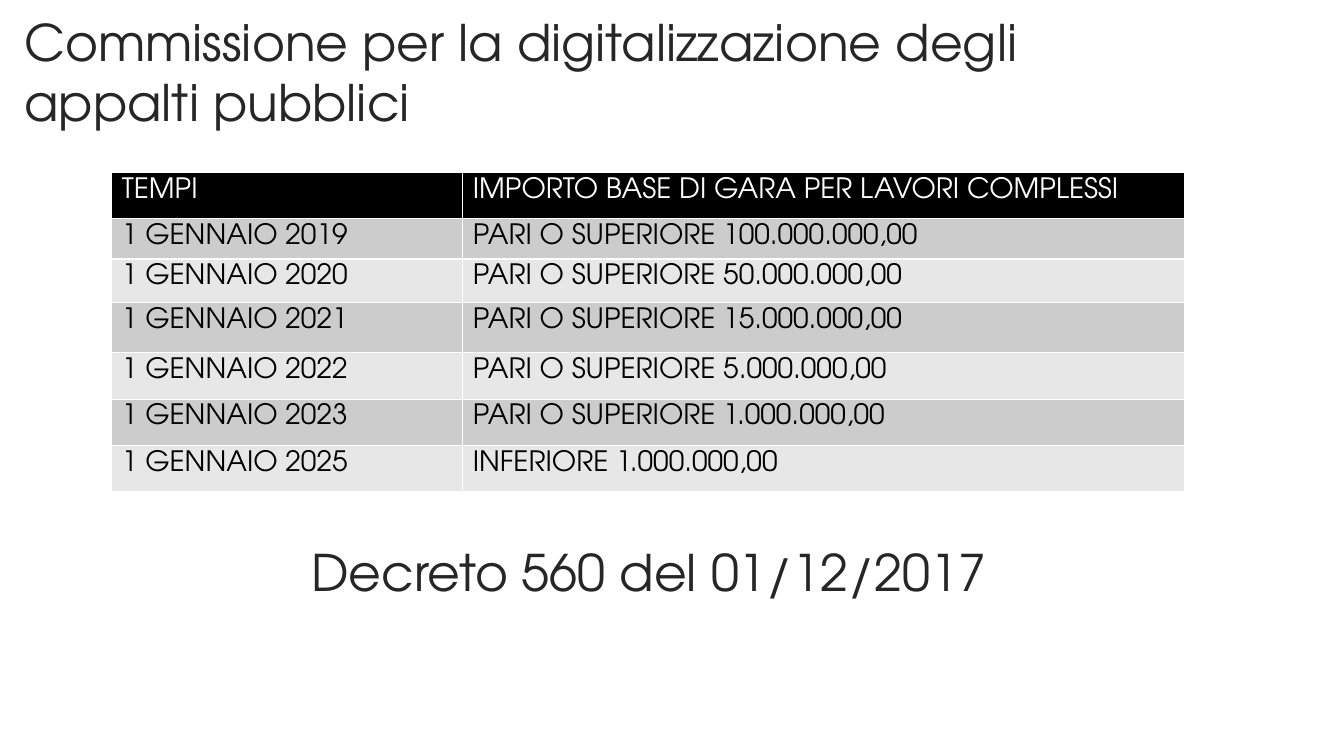
from lxml.etree import SubElement
from pptx import Presentation
from pptx.dml.color import RGBColor
from pptx.enum.text import MSO_ANCHOR, MSO_AUTO_SIZE, PP_ALIGN
from pptx.oxml.ns import qn
from pptx.util import Inches, Pt

FONT = "TeX Gyre Adventor"
COLORS = {
    "white": "FFFFFF",
    "black": "000000",
    "heading": "262626",
    "odd_row": "CCCCCC",
    "even_row": "E7E7E7",
}
COLUMN_WIDTHS = [3.48, 7.16]
ROW_HEIGHTS = [0.46, 0.4, 0.43, 0.5, 0.46, 0.46, 0.46]
ROWS = [
    ("TEMPI", "IMPORTO BASE DI GARA PER LAVORI COMPLESSI"),
    ("1 GENNAIO 2019", "PARI O SUPERIORE 100.000.000,00"),
    ("1 GENNAIO 2020", "PARI O SUPERIORE 50.000.000,00"),
    ("1 GENNAIO 2021", "PARI O SUPERIORE 15.000.000,00"),
    ("1 GENNAIO 2022", "PARI O SUPERIORE 5.000.000,00"),
    ("1 GENNAIO 2023", "PARI O SUPERIORE 1.000.000,00"),
    ("1 GENNAIO 2025", "INFERIORE 1.000.000,00"),
]


def color(name):
    return RGBColor.from_string(COLORS[name])


def add_span(para, text, size, color_name):
    span = para.add_run()
    span.text = text
    span.font.name = FONT
    span.font.size = Pt(size)
    span.font.color.rgb = color(color_name)


def fill_heading(shape, box, text, align):
    """Place a text shape in its box and write one large heading in it."""
    shape.left, shape.top, shape.width, shape.height = map(Inches, box)
    frame = shape.text_frame
    frame.word_wrap = True
    frame.auto_size = MSO_AUTO_SIZE.NONE
    frame.vertical_anchor = MSO_ANCHOR.TOP
    para = frame.paragraphs[0]
    para.alignment = align
    para.line_spacing = 1.0
    add_span(para, text, 36, "heading")


def set_borders(cell):
    """Draw white cell borders, which must come before the fill in the XML."""
    properties = cell._tc.get_or_add_tcPr()
    for side in ("lnL", "lnR", "lnT", "lnB"):
        line = SubElement(properties, qn(f"a:{side}"), w=str(Pt(1)))
        solid = SubElement(line, qn("a:solidFill"))
        SubElement(solid, qn("a:srgbClr"), val=COLORS["white"])


def add_schedule(page, box):
    frame = page.shapes.add_table(len(ROWS), len(COLUMN_WIDTHS), *map(Inches, box))
    table = frame.table
    for column, width in zip(table.columns, COLUMN_WIDTHS):
        column.width = Inches(width)
    for index, (row, height, texts) in enumerate(zip(table.rows, ROW_HEIGHTS, ROWS)):
        row.height = Inches(height)
        header = index == 0
        fill = "black" if header else "odd_row" if index % 2 else "even_row"
        for cell, text in zip(row.cells, texts):
            set_borders(cell)
            cell.fill.solid()
            cell.fill.fore_color.rgb = color(fill)
            cell.margin_top, cell.margin_bottom = Inches(0.05), 0
            para = cell.text_frame.paragraphs[0]
            add_span(para, text, 20, "white" if header else "black")


def build_page(deck):
    page = deck.slides.add_slide(deck.slide_layouts.get_by_name("Title Only"))
    fill_heading(
        page.shapes.title,
        (0.14, 0.06, 10.33, 1.85),
        "Commissione per la digitalizzazione degli appalti pubblici",
        PP_ALIGN.LEFT,
    )
    add_schedule(page, (1.11, 1.71, sum(COLUMN_WIDTHS), sum(ROW_HEIGHTS)))
    decree_box = (1.27, 5.32, 10.33, 1.25)
    decree = page.shapes.add_textbox(*map(Inches, decree_box))
    fill_heading(decree, decree_box, "Decreto 560 del 01/12/2017", PP_ALIGN.CENTER)


def main():
    deck = Presentation()
    deck.slide_width, deck.slide_height = Inches(13.33), Inches(7.5)
    build_page(deck)
    deck.save("out.pptx")


if __name__ == "__main__":
    main()
